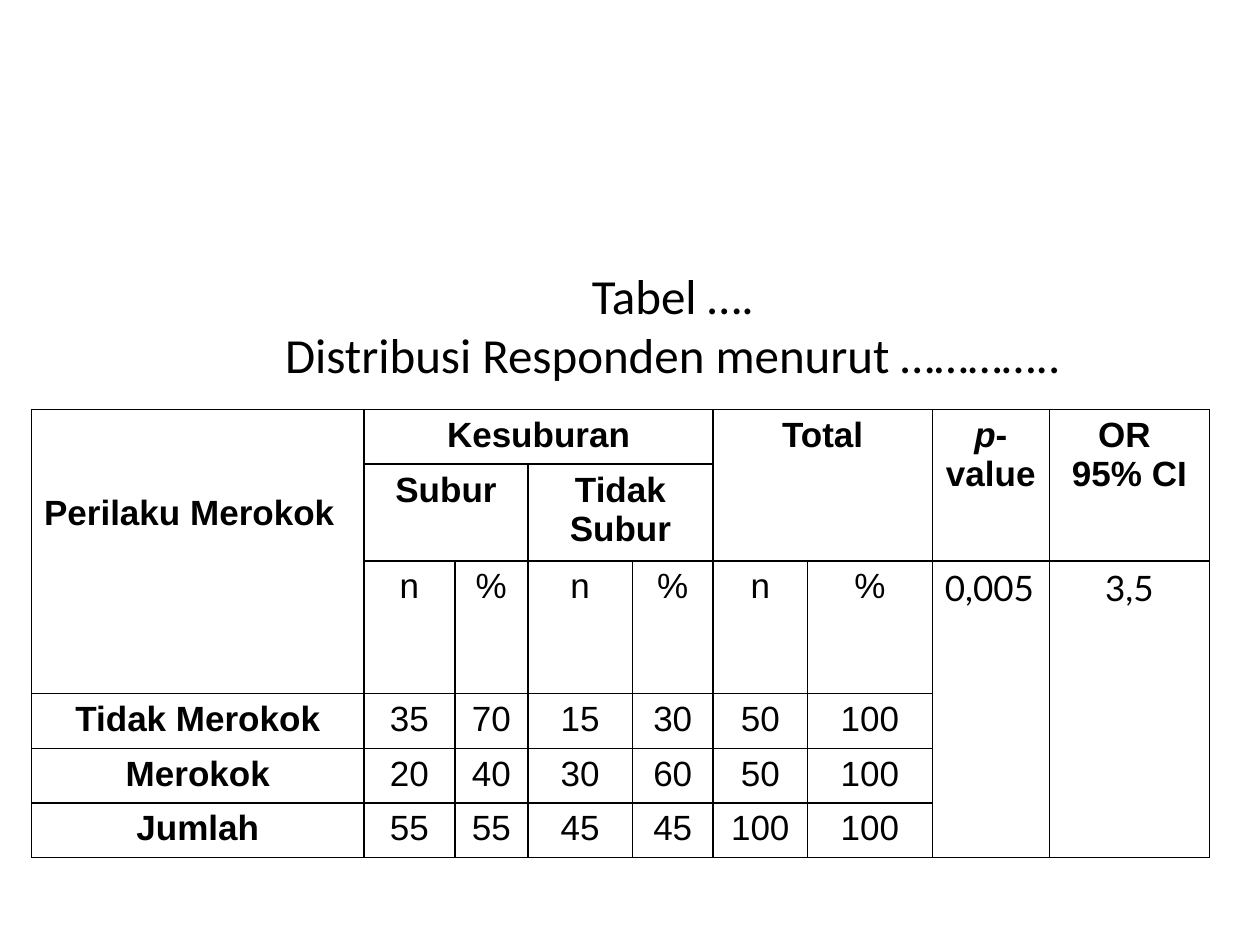
from dataclasses import dataclass

from lxml import etree
from pptx import Presentation
from pptx.dml.color import RGBColor
from pptx.enum import text
from pptx.oxml import ns
from pptx.util import Inches, Pt

BLACK = RGBColor(0, 0, 0)
CENTER, LEFT = text.PP_ALIGN.CENTER, text.PP_ALIGN.LEFT
COLUMN_WIDTHS = [2.64, 0.72, 0.58, 0.83, 0.64, 0.75, 0.99, 0.93, 1.27]
ROW_HEIGHTS = [0.41, 0.72, 1.03, 0.41, 0.41, 0.41]


@dataclass
class Entry:
    """Content of one table cell; row_span and col_span count merged cells."""
    row: int
    col: int
    words: str
    row_span: int = 1
    col_span: int = 1
    bold: bool = False
    font: str = "Arial"
    align: text.PP_ALIGN = CENTER
    top_margin: float = 0.05


HEADINGS = [
    Entry(0, 0, "Perilaku Merokok", 3, 1, True, align=LEFT, top_margin=0.67),
    Entry(0, 1, "Kesuburan", 1, 4, True),
    Entry(0, 5, "Total", 2, 2, True),
    Entry(0, 7, "p- value", 2, 1, True),
    Entry(0, 8, "OR \n95% CI", 2, 1, True),
    Entry(1, 1, "Subur", 1, 2, True),
    Entry(1, 3, "Tidak Subur", 1, 2, True),
]
RESULTS = [
    Entry(2, 7, "0,005", 4, font="Lato", align=LEFT),
    Entry(2, 8, "3,5", 4, font="Lato"),
]
COUNTS = {
    "Tidak Merokok": [35, 70, 15, 30, 50, 100],
    "Merokok": [20, 40, 30, 60, 50, 100],
    "Jumlah": [55, 55, 45, 45, 100, 100],
}


def style_paragraph(para, size: float, font: str, align, bold: bool = False) -> None:
    para.alignment = align
    para.font.size = Pt(size)
    para.font.name = font
    para.font.bold = bold
    para.font.color.rgb = BLACK


def add_borders(cell) -> None:
    properties = cell._tc.get_or_add_tcPr()
    for position, side in enumerate(("lnL", "lnR", "lnT", "lnB")):
        line = etree.Element(ns.qn(f"a:{side}"), w=str(Pt(1)))
        fill = etree.SubElement(line, ns.qn("a:solidFill"))
        etree.SubElement(fill, ns.qn("a:srgbClr"), val=str(BLACK))
        properties.insert(position, line)


def fill_entry(table, entry: Entry) -> None:
    cell = table.cell(entry.row, entry.col)
    if entry.row_span * entry.col_span > 1:
        cell.merge(table.cell(entry.row + entry.row_span - 1,
                              entry.col + entry.col_span - 1))
    cell.margin_top = Inches(entry.top_margin)
    cell.text = entry.words
    for para in cell.text_frame.paragraphs:
        style_paragraph(para, 20, entry.font, entry.align, entry.bold)
        if entry.font == "Lato":
            para.space_before = Pt(4)


def italicise_p(cell) -> None:
    para = cell.text_frame.paragraphs[0]
    span = para.runs[0]
    rest = para.add_run()
    span.text, rest.text = span.text[:1], span.text[1:]
    span.font.italic = True


def add_title(page) -> None:
    box = page.shapes.add_textbox(Inches(1.08), Inches(2.17), Inches(8.52), Inches(0.92))
    frame = box.text_frame
    frame.word_wrap = True
    frame.vertical_anchor = text.MSO_ANCHOR.BOTTOM
    para = frame.paragraphs[0]
    para.text = "Tabel ….\vDistribusi Responden menurut ………….."
    style_paragraph(para, 28, "Calibri", CENTER)


def add_distribution_table(page) -> None:
    table = page.shapes.add_table(
        len(ROW_HEIGHTS), len(COLUMN_WIDTHS), Inches(0.25), Inches(3.25),
        Inches(sum(COLUMN_WIDTHS)), Inches(sum(ROW_HEIGHTS))).table
    table.first_row = table.horz_banding = False
    for column, width in zip(table.columns, COLUMN_WIDTHS):
        column.width = Inches(width)
    for row, height in zip(table.rows, ROW_HEIGHTS):
        row.height = Inches(height)
    for cell in table.iter_cells():
        cell.fill.background()
        add_borders(cell)

    units = [Entry(2, col, "n" if col % 2 else "%") for col in range(1, 7)]
    groups = [Entry(row, 0, name, bold=True) for row, name in enumerate(COUNTS, 3)]
    values = [Entry(row, col, str(value))
              for row, counts in enumerate(COUNTS.values(), 3)
              for col, value in enumerate(counts, 1)]
    for entry in HEADINGS + units + RESULTS + groups + values:
        fill_entry(table, entry)
    italicise_p(table.cell(0, 7))


def main() -> None:
    deck = Presentation()
    deck.slide_width, deck.slide_height = Inches(10), Inches(7.5)
    page = deck.slides.add_slide(deck.slide_layouts[6])
    add_title(page)
    add_distribution_table(page)
    deck.save("out.pptx")


if __name__ == "__main__":
    main()
